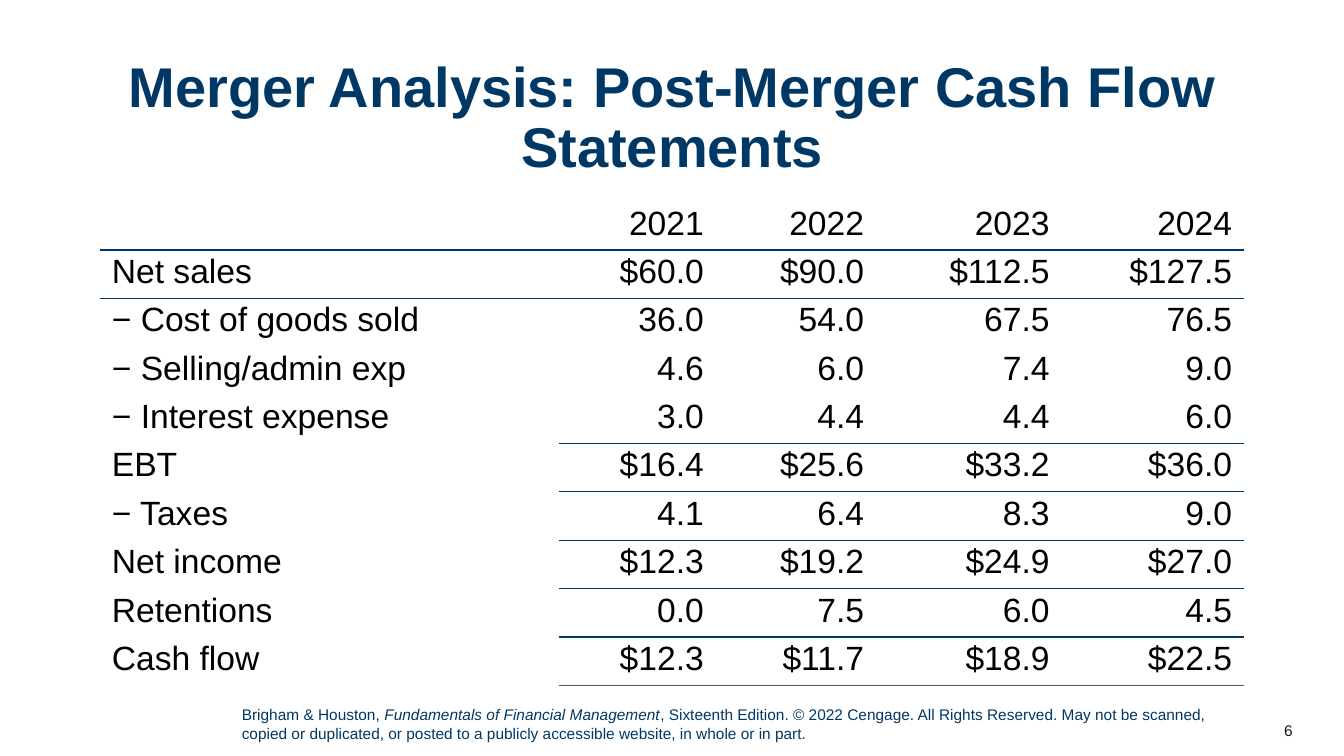
from lxml import etree
from pptx import Presentation, util as u
from pptx.dml.color import RGBColor
from pptx.enum import text as t
from pptx.oxml.ns import qn

# Content
TITLE = "Merger Analysis: Post-Merger Cash Flow Statements"
CREDIT = [
    ("Brigham & Houston, ", False),
    ("Fundamentals of Financial Management", True),
    (", Sixteenth Edition. © 2022 Cengage. All Rights Reserved. May not be scanned, "
     "copied or duplicated, or posted to a publicly accessible website, "
     "in whole or in part.", False),
]
PAGE = "6"
ROWS = [
    ("", "2021", "2022", "2023", "2024"),
    ("Net sales", "$60.0", "$90.0", "$112.5", "$127.5"),
    ("− Cost of goods sold", "36.0", "54.0", "67.5", "76.5"),
    ("− Selling/admin exp", "4.6", "6.0", "7.4", "9.0"),
    ("− Interest expense", "3.0", "4.4", "4.4", "6.0"),
    ("EBT", "$16.4", "$25.6", "$33.2", "$36.0"),
    ("− Taxes", "4.1", "6.4", "8.3", "9.0"),
    ("Net income", "$12.3", "$19.2", "$24.9", "$27.0"),
    ("Retentions", "0.0", "7.5", "6.0", "4.5"),
    ("Cash flow", "$12.3", "$11.7", "$18.9", "$22.5"),
]
RULED = {1: 0, 5: 1, 7: 1, 9: 1}  # row with a top rule: first ruled column
COLS = [4.55, 1.56, 1.59, 1.84, 1.81]
ROW_H = 0.48
NAVY, GREY, INK, BLACK = "003865", "53565A", "181717", "000000"
NO_STYLE = "{2D5ABB26-0587-4C30-8999-92F81FD0307C}"
LEFT, RIGHT, MID = t.PP_ALIGN.LEFT, t.PP_ALIGN.RIGHT, t.PP_ALIGN.CENTER


def paint(font, size, color, bold=False):
    font.name, font.size, font.bold = "Arial", u.Pt(size), bold
    font.color.rgb = RGBColor.from_string(color)


def add_text(box, runs, size, color, align=LEFT, bold=False,
             anchor=t.MSO_ANCHOR.TOP):
    frame = slide.shapes.add_textbox(*map(u.Inches, box)).text_frame
    frame.word_wrap, frame.vertical_anchor = True, anchor
    para = frame.paragraphs[0]
    para.alignment = align
    paint(para.font, size, color, bold)
    for words, slant in runs:
        run = para.add_run()
        run.text = words
        if slant:
            run.font.italic = True
    return para


def add_rule(cell, side, color):
    line = etree.Element(qn("a:" + side), w=str(u.Pt(1)))
    fill = etree.SubElement(line, qn("a:solidFill"))
    etree.SubElement(fill, qn("a:srgbClr"), val=color)
    cell._tc.get_or_add_tcPr().insert(0, line)


deck = Presentation()
deck.slide_width, deck.slide_height = u.Inches(13.33), u.Inches(7.5)
slide = deck.slides.add_slide(deck.slide_layouts[6])

# Footer
add_text((12.12, 7.05, 0.8, 0.4), [(PAGE, False)], 11, INK, RIGHT,
         anchor=t.MSO_ANCHOR.MIDDLE)
add_text((2.3, 6.95, 9.8, 0.47), CREDIT, 11, NAVY)

# Title
head = add_text((0.52, 0.52, 12.29, 1.33), [(TITLE, False)], 40, NAVY, MID, True,
                t.MSO_ANCHOR.MIDDLE)
head.line_spacing = 0.9

# Cash flow table
box = (0.99, 2, sum(COLS), ROW_H * len(ROWS))
table = slide.shapes.add_table(len(ROWS), len(COLS), *map(u.Inches, box)).table
table.first_row = table.horz_banding = False
table._tbl.tblPr.find(qn("a:tableStyleId")).text = NO_STYLE
for col, width in zip(table.columns, COLS):
    col.width = u.Inches(width)
for r, row in enumerate(ROWS):
    table.rows[r].height = u.Inches(ROW_H)
    for c, words in enumerate(row):
        cell = table.cell(r, c)
        cell.fill.background()
        cell.margin_left = cell.margin_right = u.Inches(0.12)
        cell.margin_top = cell.margin_bottom = u.Inches(0.03)
        cell.text = words
        para = cell.text_frame.paragraphs[0]
        para.alignment = RIGHT if c else LEFT
        paint(para.font, 24, BLACK)
        if r == len(ROWS) - 1 and c:
            add_rule(cell, "lnB", GREY)
        if c >= RULED.get(r, len(COLS)):
            add_rule(cell, "lnT", NAVY)

deck.save("out.pptx")
